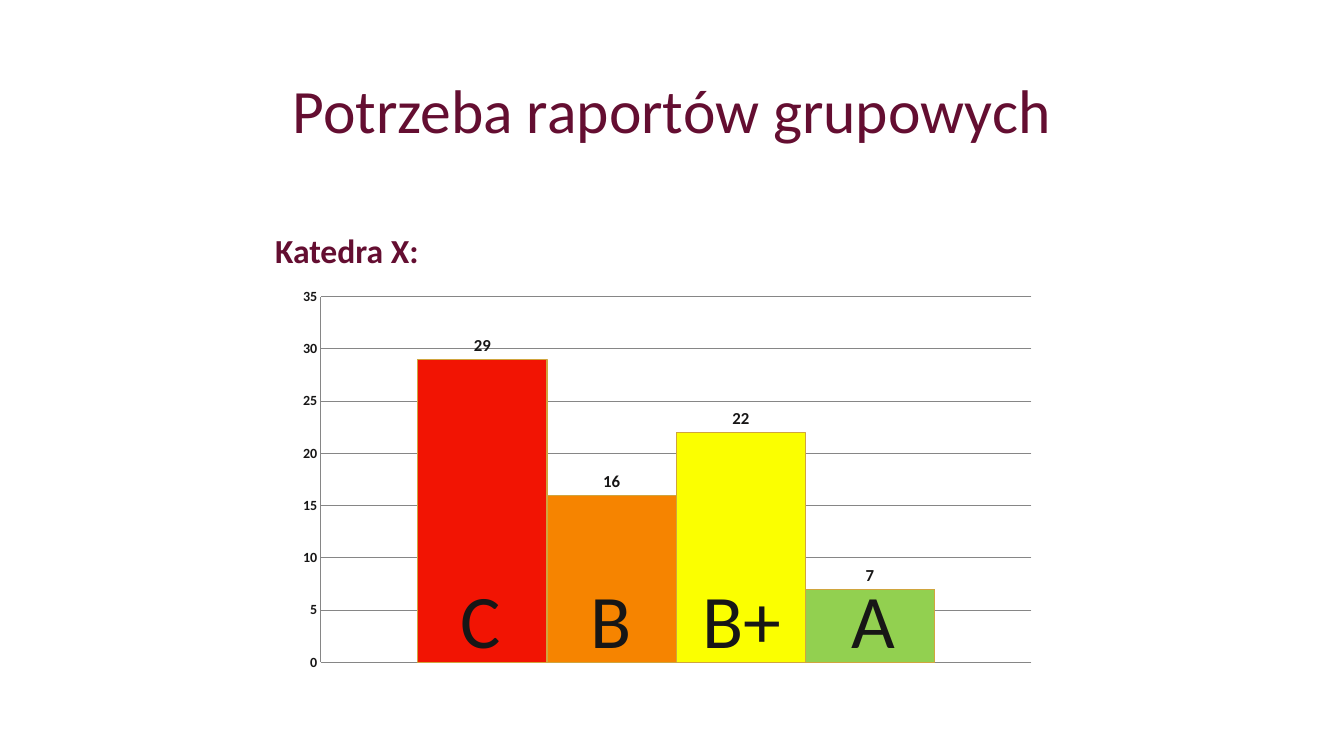
from lxml import etree
from pptx import Presentation
from pptx import util as u
from pptx.chart import data as chart_data
from pptx.dml import color as dml
from pptx.enum import chart as ch, text
from pptx.oxml import ns

FONT, INK, WINE = "Calibri", "171616", "640E31"
GRID, BAR_EDGE = "868686", "D0A53E"

# Grade, number of people, bar colour
GRADES = [("C", 29, "F21403"), ("B", 16, "F68400"),
          ("B+", 22, "FBFF00"), ("A", 7, "92D050")]


def rgb(value):
    return dml.RGBColor.from_string(value)


class Deck:
    def __init__(self):
        self.prs = Presentation()
        self.prs.slide_width, self.prs.slide_height = u.Pt(960), u.Pt(540)
        self.slide = self.prs.slides.add_slide(self.prs.slide_layouts[6])

    def style(self, font, size, color, bold=False):
        font.name, font.size, font.bold = FONT, u.Pt(size), bold
        font.color.rgb = rgb(color)

    def label(self, words, box, size, color, bold=False, centred=False,
              wrap=True, anchor=text.MSO_ANCHOR.TOP, spacing=1.0):
        frame = self.slide.shapes.add_textbox(*map(u.Pt, box)).text_frame
        frame.word_wrap, frame.vertical_anchor = wrap, anchor
        line = frame.paragraphs[0]
        line.text, line.line_spacing = words, spacing
        line.alignment = text.PP_ALIGN.CENTER if centred else text.PP_ALIGN.LEFT
        self.style(line.font, size, color, bold)

    def column_chart(self, values, colors, box, plot_box):
        counts = chart_data.CategoryChartData(number_format="General")
        counts.categories = ["1"]
        for number, value in enumerate(values, 1):
            counts.add_series(f"Series {number}", [value])
        chart = self.slide.shapes.add_chart(
            ch.XL_CHART_TYPE.COLUMN_CLUSTERED, *map(u.Pt, box), counts).chart
        chart.has_legend = chart.has_title = False
        self.style(chart.font, 10, INK)

        # Axes
        chart.category_axis.visible = False
        axis = chart.value_axis
        axis.minimum_scale, axis.maximum_scale, axis.major_unit = 0, 35, 5
        axis.major_tick_mark = axis.minor_tick_mark = ch.XL_TICK_MARK.NONE
        axis.has_major_gridlines = True
        self.style(axis.tick_labels.font, 10, INK, bold=True)
        for line in (axis.format.line, axis.major_gridlines.format.line):
            line.color.rgb, line.width = rgb(GRID), u.Pt(0.75)

        # Bars and their values
        plot = chart.plots[0]
        plot.gap_width, plot.overlap, plot.vary_by_categories = 150, 0, False
        for bar, color in zip(plot.series, colors):
            bar.invert_if_negative = False
            bar.format.fill.solid()
            bar.format.fill.fore_color.rgb = rgb(color)
            bar.format.line.color.rgb = rgb(BAR_EDGE)
            bar.format.line.width = u.Pt(0.75)
            labels = bar.data_labels
            labels.show_value = True
            labels.position = ch.XL_LABEL_POSITION.OUTSIDE_END
            self.style(labels.font, 12, INK, bold=True)
        self.place_plot(chart, plot_box)

    def place_plot(self, chart, plot_box):
        area = chart.element.find(".//" + ns.qn("c:plotArea"))
        for old in area.findall(ns.qn("c:layout")):
            area.remove(old)
        layout = etree.Element(ns.qn("c:layout"))
        area.insert(0, layout)
        manual = etree.SubElement(layout, ns.qn("c:manualLayout"))
        settings = [("layoutTarget", "inner"), ("xMode", "edge"), ("yMode", "edge")]
        for tag, value in settings + list(zip("xywh", plot_box)):
            etree.SubElement(manual, ns.qn("c:" + tag)).set("val", str(value))


def main():
    deck = Deck()

    # Title
    deck.label("Potrzeba raportów grupowych", (66, 29, 828, 104), 44, WINE,
               centred=True, anchor=text.MSO_ANCHOR.MIDDLE, spacing=0.9)

    # Chart of grades in the department
    grades, values, colors = zip(*GRADES)
    deck.column_chart(values, colors, (207.4, 200.9, 545.8, 283.7),
                      (0.04, 0.039, 0.93, 0.921))
    deck.label("Katedra X:", (189.4, 160.6, 260, 36), 24, WINE, bold=True)

    # Grade letters, one at the foot of each bar
    first_centre, bar_width, letter_width = 343, 93.5, 76
    for i, grade in enumerate(grades):
        left = first_centre + i * bar_width - letter_width / 2
        deck.label(grade, (left, 405.4, letter_width, 72.7), 54, INK,
                   centred=True, wrap=False)

    deck.prs.save("out.pptx")


if __name__ == "__main__":
    main()
